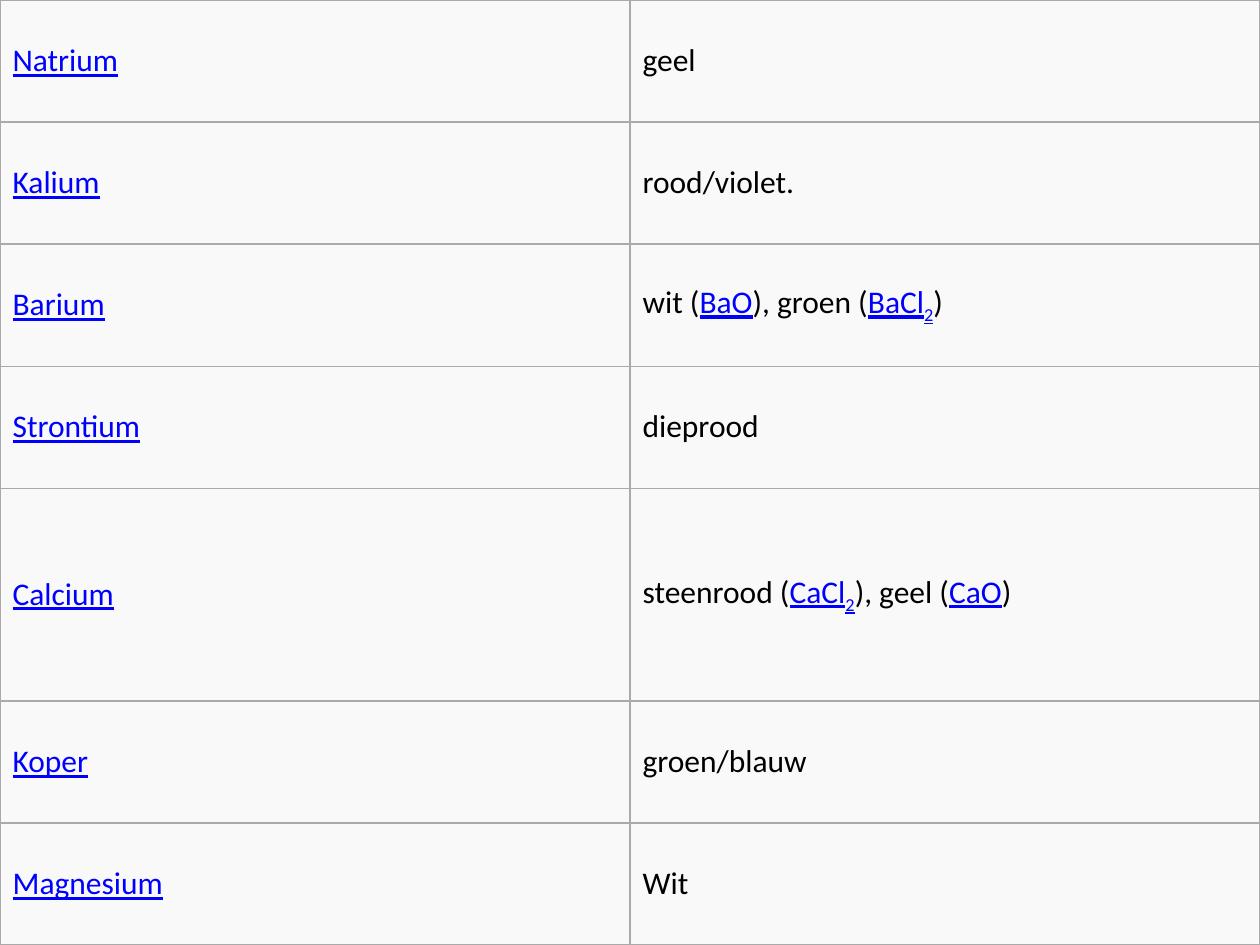
import pptx
import pptx.dml.color
import pptx.enum.text
import pptx.oxml
import pptx.oxml.ns
import pptx.util
from pptx.util import Cm

COLORS = {"text": "000000", "link": "0000FF", "cell": "F9F9F9", "border": "AAAAAA"}

# Run styles: colour, underline and baseline shift
STYLES = {
    "text": {"color": "text", "underline": False, "baseline": None},
    "link": {"color": "link", "underline": True, "baseline": None},
    "sub": {"color": "link", "underline": True, "baseline": "-25000"},
}
FONT = {"name": "Calibri", "size": pptx.util.Pt(18)}

# Each element with the runs that describe its flame colour
FLAMES = [
    ("Natrium", [("geel", "text")]),
    ("Kalium", [("rood/violet.", "text")]),
    ("Barium", [("wit (", "text"), ("BaO", "link"), ("), groen (", "text"),
                ("BaCl", "link"), ("2", "sub"), (")", "text")]),
    ("Strontium", [("dieprood", "text")]),
    ("Calcium", [("steenrood (", "text"), ("CaCl", "link"), ("2", "sub"),
                 ("), geel (", "text"), ("CaO", "link"), (")", "text")]),
    ("Koper", [("groen/blauw", "text")]),
    ("Magnesium", [("Wit", "text")]),
]
ROW_HEIGHT = Cm(2.46)
TALL_ROW = 4


def rgb(name):
    return pptx.dml.color.RGBColor.from_string(COLORS[name])


def add_run(p, text, style):
    r = p.add_run()
    r.text = text
    for key, value in {**FONT, "underline": style["underline"]}.items():
        setattr(r.font, key, value)
    r.font.color.rgb = rgb(style["color"])
    if style["baseline"]:
        r._r.get_or_add_rPr().set("baseline", style["baseline"])


def add_borders(cell):
    tc_pr = cell._tc.get_or_add_tcPr()
    for i, side in enumerate(("lnL", "lnR", "lnT", "lnB")):
        line = pptx.oxml.parse_xml(
            f'<a:{side} {pptx.oxml.ns.nsdecls("a")} w="{pptx.util.Pt(0.75)}">'
            f'<a:solidFill><a:srgbClr val="{COLORS["border"]}"/></a:solidFill>'
            f'</a:{side}>')
        tc_pr.insert(i, line)


def fill_cell(cell, runs):
    cell.vertical_anchor = pptx.enum.text.MSO_ANCHOR.MIDDLE
    cell.fill.solid()
    cell.fill.fore_color.rgb = rgb("cell")
    add_borders(cell)
    for text, style in runs:
        add_run(cell.text_frame.paragraphs[0], text, STYLES[style])


def add_flame_table(slide, left, top, width, height):
    table = slide.shapes.add_table(len(FLAMES), 2, left, top, width, height).table
    for flag in ("first_row", "horz_banding"):
        setattr(table, flag, False)
    for column in table.columns:
        column.width = width // 2

    # The tall row takes the height that the others leave
    for row in table.rows:
        row.height = ROW_HEIGHT
    table.rows[TALL_ROW].height = height - ROW_HEIGHT * (len(FLAMES) - 1)

    for i, (element, flame) in enumerate(FLAMES):
        fill_cell(table.cell(i, 0), [(element, "link")])
        fill_cell(table.cell(i, 1), flame)


def main():
    prs = pptx.Presentation()
    prs.slide_width, prs.slide_height = Cm(25.4), Cm(19.05)
    slide = prs.slides.add_slide(prs.slide_layouts[6])
    add_flame_table(slide, 0, 0, prs.slide_width, prs.slide_height)
    prs.save("out.pptx")


if __name__ == "__main__":
    main()
